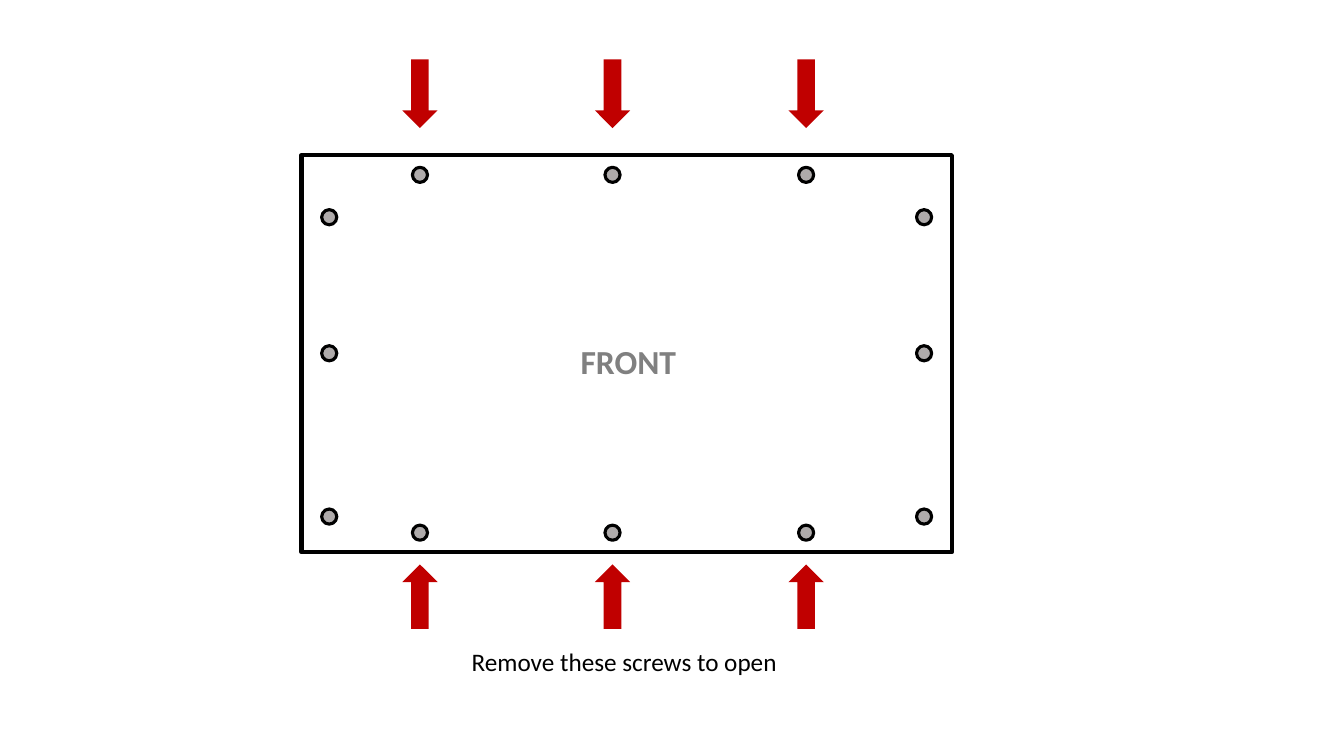
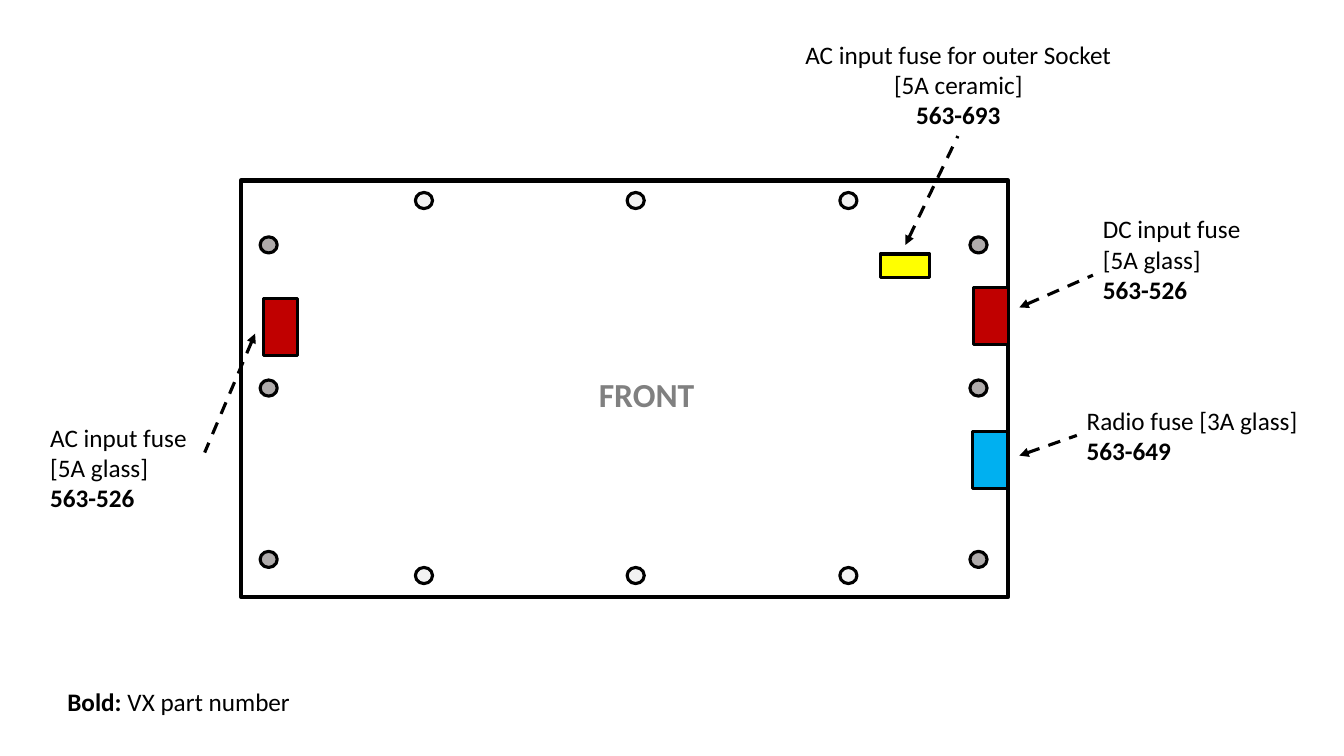
import pptx
import pptx.util
import pptx.dml.color
import pptx.enum.dml
import pptx.enum.shapes
import pptx.enum.text
import pptx.oxml
import pptx.oxml.ns
from dataclasses import dataclass

SHAPE = pptx.enum.shapes.MSO_SHAPE
ALIGN = pptx.enum.text.PP_ALIGN
PX = 9144  # EMU in one px, 100 px to the inch


@dataclass(frozen=True)
class Theme:
    font: str = "Calibri"
    body: int = 18
    panel_label: int = 24
    panel_line: float = 3
    part_line: float = 2.25
    ink: str = "000000"
    gray: str = "808080"
    screw: str = "AFABAB"
    removed: str = "F2F2F2"
    red: str = "C00000"
    blue: str = "00B0F0"
    yellow: str = "FFFF00"


THEME = Theme()

# Screws sit in two rows (columns x rows) and on both sides (sides x levels).
CLOSED_PANEL = dict(
    frame=(299, 154, 645, 394), screw=(15, 15), row_fill=THEME.screw,
    columns=(409, 600, 792), rows=(166, 521),
    sides=(319, 909), levels=(208, 343, 505),
    label=(566, 333, 199, 50))
OPEN_PANEL = dict(
    frame=(239, 179, 761, 413), screw=(17, 16), row_fill=THEME.removed,
    columns=(412, 622, 833), rows=(191, 563),
    sides=(258, 962), levels=(235, 377, 547),
    label=(584, 366, 219, 53))

ARROW_WIDTH = 35
ARROW_ROWS = [(SHAPE.DOWN_ARROW, 59, 68), (SHAPE.UP_ARROW, 560, 64)]
INSTRUCTION = ((458, 636, 505, 40), [[("Remove these screws to open", False)]])

FUSES = [
    ((965, 428, 34, 57), THEME.blue),
    ((261, 296, 34, 57), THEME.red),
    ((966, 285, 34, 57), THEME.red),
    ((873, 252, 49, 23), THEME.yellow),
]
POINTERS = [  # fuse end, label end
    ((1011, 305), (1084, 273)),
    ((1011, 452), (1068, 432)),
    ((253, 331), (203, 449)),
    ((898, 243), (950, 135)),
]
NOTES = [
    ((775, 34, 351, 101), ALIGN.CENTER,
     [[("AC input fuse for outer Socket", False)], [("[5A ceramic]", False)],
      [("563-693", True)]]),
    ((1084, 207, 173, 131), ALIGN.LEFT,
     [[("DC input fuse [5A glass]", False)], [("563-526", True)]]),
    ((40, 414, 173, 101), ALIGN.LEFT,
     [[("AC input fuse [5A glass]", False)], [("563-526", True)]]),
    ((1068, 397, 265, 71), ALIGN.LEFT,
     [[("Radio fuse [3A glass]", False)], [("563-649", True)]]),
    ((57, 676, 442, 40), ALIGN.LEFT,
     [[("Bold: ", True), ("VX part number", False)]]),
]


def emu(lengths):
    return [round(n * PX) for n in lengths]


def rgb(color):
    return pptx.dml.color.RGBColor.from_string(color)


def add_part(s, kind, box, fill=None, line=None):
    """Add a preset shape; without fill or line width that part stays empty."""
    sp = s.shapes.add_shape(kind, *emu(box))
    sp.shadow.inherit = False
    if fill:
        sp.fill.solid()
        sp.fill.fore_color.rgb = rgb(fill)
    else:
        sp.fill.background()
    if line:
        sp.line.color.rgb = rgb(THEME.ink)
        sp.line.width = pptx.util.Pt(line)
    else:
        sp.line.fill.background()


def add_text(s, box, paragraphs, align=ALIGN.LEFT, size=THEME.body, color=THEME.ink):
    """Add paragraphs, each a list of (text, bold) runs."""
    tf = s.shapes.add_textbox(*emu(box)).text_frame
    tf.word_wrap = True
    for i, runs in enumerate(paragraphs):
        p = tf.add_paragraph() if i else tf.paragraphs[0]
        p.alignment = align
        p.font.name = THEME.font
        p.font.size = pptx.util.Pt(size)
        p.font.color.rgb = rgb(color)
        for text, bold in runs:
            r = p.add_run()
            r.text = text
            r.font.bold = bold


def add_pointer(s, target, label):
    """Add a dashed line whose arrowhead is at the target."""
    line = s.shapes.add_connector(
        pptx.enum.shapes.MSO_CONNECTOR.STRAIGHT, *emu(target + label))
    line.line.color.rgb = rgb(THEME.ink)
    line.line.width = pptx.util.Pt(THEME.part_line)
    line.line.dash_style = pptx.enum.dml.MSO_LINE.DASH
    props = line._element.spPr
    head = pptx.oxml.parse_xml(
        f'<a:headEnd {pptx.oxml.ns.nsdecls("a")} type="triangle"/>')
    props.find(pptx.oxml.ns.qn("a:ln")).append(head)
    props.append(pptx.oxml.parse_xml(
        f'<a:effectLst {pptx.oxml.ns.nsdecls("a")}/>'))


def add_panel(s, panel):
    add_part(s, SHAPE.RECTANGLE, panel["frame"], line=THEME.panel_line)
    groups = [(panel["columns"], panel["rows"], panel["row_fill"]),
              (panel["sides"], panel["levels"], THEME.screw)]
    for xs, ys, fill in groups:
        for x in xs:
            for y in ys:
                add_part(s, SHAPE.OVAL, (x, y, *panel["screw"]), fill,
                         THEME.part_line)
    add_text(s, panel["label"], [[("FRONT", True)]],
             size=THEME.panel_label, color=THEME.gray)


def build_screw_slide(s):
    add_panel(s, CLOSED_PANEL)
    inset = (ARROW_WIDTH - CLOSED_PANEL["screw"][0]) // 2
    for kind, top, height in ARROW_ROWS:
        for x in CLOSED_PANEL["columns"]:
            add_part(s, kind, (x - inset, top, ARROW_WIDTH, height), THEME.red)
    add_text(s, *INSTRUCTION)


def build_fuse_slide(s):
    for target, label in POINTERS:
        add_pointer(s, target, label)
    add_panel(s, OPEN_PANEL)
    for box, fill in FUSES:
        add_part(s, SHAPE.RECTANGLE, box, fill, THEME.part_line)
    for box, align, paragraphs in NOTES:
        add_text(s, box, paragraphs, align)


def main():
    prs = pptx.Presentation()
    prs.slide_width, prs.slide_height = emu((1333, 750))
    blank = prs.slide_layouts[6]
    for build in (build_screw_slide, build_fuse_slide):
        build(prs.slides.add_slide(blank))
    prs.save("out.pptx")


if __name__ == "__main__":
    main()
